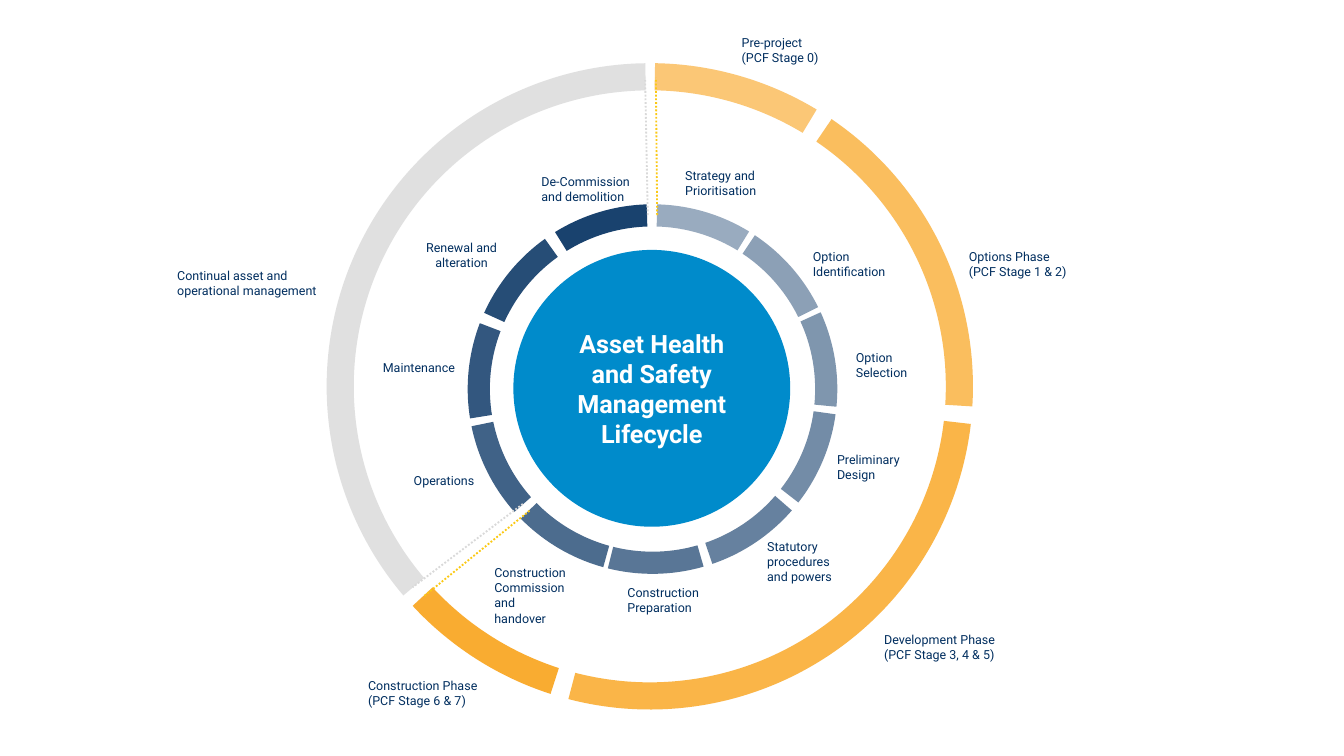
import pptx
import pptx.dml.color
import pptx.enum.dml
import pptx.enum.shapes
import pptx.enum.text
import pptx.oxml.ns
import pptx.util
from lxml import etree
from pptx.util import Inches

COLOURS = {"navy": "002E5F", "blue": "008BCB", "orange": "F9A31B",
           "gold": "FBC914", "grey": "D9D9D9", "white": "FFFFFF"}
FONT = "Roboto"
LEFT, CENTER = pptx.enum.text.PP_ALIGN.LEFT, pptx.enum.text.PP_ALIGN.CENTER

TITLE = "Asset Health and Safety Management Lifecycle"

# Inner ring, clockwise: label, rotation of its arc, label box, alignment
STAGES = [
    ("Strategy and Prioritisation", 4.6, (5, 1.2, 0.8, 0.33), LEFT),
    ("Option Identification", 36.8, (5.95, 1.8, 0.8, 0.33), LEFT),
    ("Option Selection", 68.6, (6.27, 2.55, 0.66, 0.33), LEFT),
    ("Preliminary Design", 101, (6.13, 3.31, 0.76, 0.33), LEFT),
    ("Statutory procedures and powers", 134.2, (5.61, 3.96, 0.79, 0.44), LEFT),
    ("Construction Preparation", 167.1, (4.57, 4.3, 0.9, 0.33), LEFT),
    ("Construction Commission and handover", 198.6, (3.58, 4.15, 0.75, 0.56), LEFT),
    ("Operations", 231.5, (2.98, 3.47, 0.73, 0.21), LEFT),
    ("Maintenance", 264, (2.75, 2.63, 0.85, 0.21), LEFT),
    ("Renewal and alteration", 297.5, (3.04, 1.73, 0.79, 0.33), CENTER),
    ("De-Commission and demolition", 331.3, (3.93, 1.24, 0.97, 0.33), LEFT),
]

# Outer ring: label, rotation, start and end degrees, colour, opacity %, label box
PHASES = [
    ("Continual asset and operational management", 202, 297.7, 67.2,
     "grey", 80, (1.22, 1.94, 1.26, 0.33)),
    ("Pre-project (PCF Stage 0)", 334, 296.93, 327.08,
     "orange", 60, (5.42, 0.21, 0.82, 0.33)),
    ("Options Phase (PCF Stage 1 & 2)", 6, 298.23, 357.56,
     "orange", 70, (7.11, 1.8, 0.99, 0.33)),
    ("Development Phase (PCF Stage 3, 4 & 5)", 69, 297.7, 35.59,
     "orange", 80, (6.48, 4.65, 1.16, 0.33)),
    ("Construction Phase (PCF Stage 6 & 7)", 68, 39.89, 69.21,
     "orange", 90, (2.64, 4.99, 1.08, 0.33)),
]

# Dotted dividers: colour, start, end
DIVIDERS = [
    ("gold", (4.89, 1.6), (4.88, 0.58)),
    ("gold", (3.94, 3.8), (3.15, 4.44)),
    ("grey", (3.89, 3.75), (3.07, 4.37)),
    ("grey", (4.82, 1.6), (4.8, 0.58)),
]

OUTER_RING = (2.43, 0.47, 4.81, 4.81)
INNER_RING = (3.48, 1.52, 2.75, 2.75)
HUB = (3.82, 1.86, 2.06, 2.06)
STAGE_ANGLES = (266.86, 296.89)
# Ring thickness in percent of the diameter
OUTER_THICKNESS, INNER_THICKNESS = 4.2, 6


def rgb(name):
    return pptx.dml.color.RGBColor.from_string(COLOURS[name])


def write_text(shape, text, size=6.75, colour="navy", bold=False, align=LEFT):
    frame = shape.text_frame
    frame.word_wrap = True
    frame.vertical_anchor = pptx.enum.text.MSO_ANCHOR.MIDDLE
    paragraph = frame.paragraphs[0]
    paragraph.alignment = align
    run = paragraph.add_run()
    run.text = text
    run.font.name = FONT
    run.font.size = pptx.util.Pt(size)
    run.font.bold = bold
    run.font.color.rgb = rgb(colour)


def add_filled_shape(slide, kind, box, colour):
    shape = slide.shapes.add_shape(kind, *map(Inches, box))
    shape.shadow.inherit = False
    shape.fill.solid()
    shape.fill.fore_color.rgb = rgb(colour)
    shape.line.fill.background()
    return shape


def add_arc(slide, box, rotation, angles, thickness, colour, opacity):
    arc = add_filled_shape(slide, pptx.enum.shapes.MSO_SHAPE.BLOCK_ARC, box, colour)
    arc.rotation = rotation
    # Angles are stored in 60000ths of a degree, adjustments in 100000ths
    for index, angle in enumerate(angles):
        arc.adjustments[index] = angle * 0.6
    arc.adjustments[2] = thickness / 100
    colour_element = arc._element.spPr.find(".//" + pptx.oxml.ns.qn("a:srgbClr"))
    alpha = etree.SubElement(colour_element, pptx.oxml.ns.qn("a:alpha"))
    alpha.set("val", str(opacity * 1000))


def add_label(slide, text, box, align=LEFT):
    label = slide.shapes.add_textbox(*map(Inches, box))
    write_text(label, text, align=align)
    label.text_frame.auto_size = pptx.enum.text.MSO_AUTO_SIZE.SHAPE_TO_FIT_TEXT


def add_divider(slide, colour, start, end):
    divider = slide.shapes.add_connector(
        pptx.enum.shapes.MSO_CONNECTOR.STRAIGHT, *map(Inches, start + end))
    divider.line.color.rgb = rgb(colour)
    divider.line.width = pptx.util.Pt(1)
    divider.line.dash_style = pptx.enum.dml.MSO_LINE.ROUND_DOT
    etree.SubElement(divider._element.spPr, pptx.oxml.ns.qn("a:effectLst"))


def main():
    presentation = pptx.Presentation()
    presentation.slide_width = Inches(10)
    presentation.slide_height = Inches(10 * 9 / 16)
    slide = presentation.slides.add_slide(presentation.slide_layouts[6])

    # Outer ring of phases
    for text, rotation, start, end, colour, opacity, box in PHASES:
        add_arc(slide, OUTER_RING, rotation, (start, end), OUTER_THICKNESS,
                colour, opacity)
        add_label(slide, text, box)

    # Hub with the title
    hub = add_filled_shape(slide, pptx.enum.shapes.MSO_SHAPE.OVAL, HUB, "blue")
    write_text(hub, TITLE, size=13.5, colour="white", bold=True, align=CENTER)

    # Inner ring of stages, darkening clockwise
    for index, (text, rotation, box, align) in enumerate(STAGES):
        add_arc(slide, INNER_RING, rotation, STAGE_ANGLES, INNER_THICKNESS,
                "navy", 40 + 5 * index)
        add_label(slide, text, box, align)

    # Dividers between project and operation
    for colour, start, end in DIVIDERS:
        add_divider(slide, colour, start, end)

    presentation.save("out.pptx")


if __name__ == "__main__":
    main()
